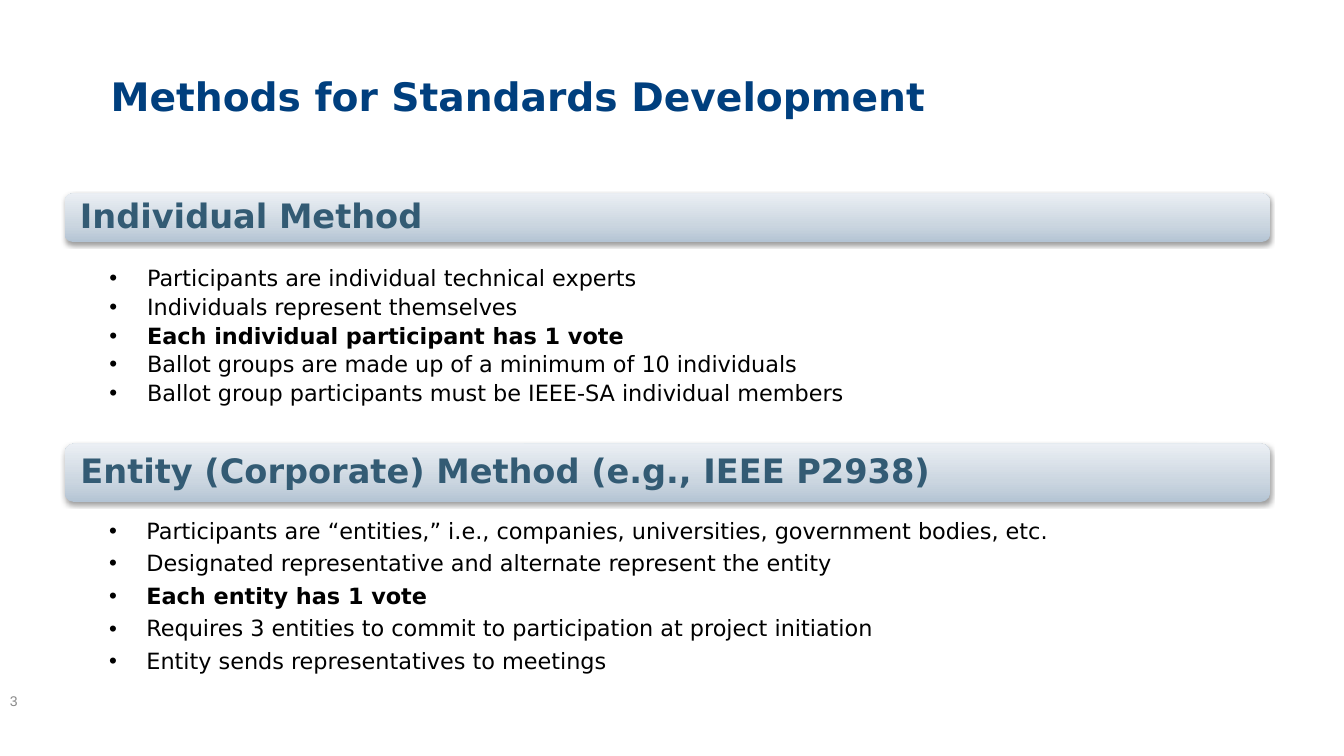
"""Builds the slide on individual and entity methods for standards development."""
from pptx import Presentation
from pptx.dml.color import RGBColor as RGB
from pptx.enum.shapes import MSO_SHAPE as SHAPE
from pptx.enum.text import MSO_ANCHOR as ANCHOR, PP_ALIGN as ALIGN
from pptx.oxml import parse_xml
from pptx.oxml.ns import nsdecls
from pptx.util import Pt

COLORS = {
    "title": "003F7E", "heading": "335B74", "body": "000000", "number": "898989",
    "bar_low": "B4C4D4", "bar_mid": "CBD6E0", "bar_high": "EBEFF4", "shadow": "000000",
}
FONT = "DejaVu Sans"
LEFT, WIDTH = 46.2, 861

INDIVIDUAL = [
    ("Participants are individual technical experts", False),
    ("Individuals represent themselves", False),
    ("Each individual participant has 1 vote", True),
    ("Ballot groups are made up of a minimum of 10 individuals", False),
    ("Ballot group participants must be IEEE-SA individual members", False),
]
ENTITY = [
    ("Participants are “entities,” i.e., companies, universities, government bodies, etc.", False),
    ("Designated representative and alternate represent the entity", False),
    ("Each entity has 1 vote", True),
    ("Requires 3 entities to commit to participation at project initiation", False),
    ("Entity sends representatives to meetings", False),
]


class Deck:
    def __init__(self):
        self.prs = Presentation()
        self.prs.slide_width, self.prs.slide_height = Pt(960), Pt(540)
        self.s = self.prs.slides.add_slide(self.prs.slide_layouts[6])

    def frame(self, sp, anchor, insets):
        tf = sp.text_frame
        tf.word_wrap = True
        tf.vertical_anchor = anchor
        tf.margin_left, tf.margin_top, tf.margin_right, tf.margin_bottom = map(Pt, insets)
        return tf

    def run(self, p, text, size, color, bold=False, font=FONT):
        p.alignment = ALIGN.LEFT
        r = p.add_run()
        r.text = text
        r.font.name, r.font.size, r.font.bold = font, Pt(size), bold
        r.font.color.rgb = RGB.from_string(COLORS[color])

    def text(self, x, y, w, h, text, size, color, anchor=ANCHOR.TOP, bold=False, font=FONT):
        sp = self.s.shapes.add_textbox(Pt(x), Pt(y), Pt(w), Pt(h))
        tf = self.frame(sp, anchor, (7.2, 3.6, 7.2, 3.6))
        self.run(tf.paragraphs[0], text, size, color, bold, font)

    def bar(self, y, h, text):
        sp = self.s.shapes.add_shape(SHAPE.ROUNDED_RECTANGLE, Pt(LEFT), Pt(y), Pt(WIDTH), Pt(h))
        sp.shadow.inherit = False
        sp.line.fill.background()
        stops = "".join(
            f'<a:gs pos="{pos * 1000}"><a:srgbClr val="{COLORS[c]}"/></a:gs>'
            for pos, c in ((0, "bar_low"), (35, "bar_mid"), (100, "bar_high")))
        ln = sp.line._get_or_add_ln()
        ln.addprevious(parse_xml(
            f'<a:gradFill {nsdecls("a")} rotWithShape="1"><a:gsLst>{stops}</a:gsLst>'
            '<a:lin ang="16200000" scaled="0"/></a:gradFill>'))
        ln.getnext().append(parse_xml(
            f'<a:outerShdw {nsdecls("a")} blurRad="{Pt(3.1)}" dist="{Pt(1.6)}" dir="5400000" '
            f'rotWithShape="0"><a:srgbClr val="{COLORS["shadow"]}"><a:alpha val="38000"/>'
            '</a:srgbClr></a:outerShdw>'))
        p = self.frame(sp, ANCHOR.MIDDLE, (9.2, 7.2, 9.2, 7.2)).paragraphs[0]
        p.line_spacing = 0.9
        self.run(p, text, 24, "heading", True)

    def bullets(self, y, h, items, gap, margin, hang):
        sp = self.s.shapes.add_textbox(Pt(LEFT), Pt(y), Pt(WIDTH), Pt(h))
        tf = self.frame(sp, ANCHOR.TOP, (27.4, 1.4, 8.6, 1.4))
        for i, (text, bold) in enumerate(items):
            p = tf.add_paragraph() if i else tf.paragraphs[0]
            p.line_spacing, p.space_after = 0.9, Pt(gap)
            pPr = p._p.get_or_add_pPr()
            pPr.set("marL", str(Pt(margin)))
            pPr.set("indent", str(Pt(-hang)))
            pPr.append(parse_xml(f'<a:buFont {nsdecls("a")} typeface="Arial"/>'))
            pPr.append(parse_xml(f'<a:buChar {nsdecls("a")} char="•"/>'))
            self.run(p, text, 16, "body", bold)


def main():
    deck = Deck()
    deck.text(72, 48, 816, 90, "Methods for Standards Development", 28, "title", bold=True)
    deck.bar(138.2, 34.6, "Individual Method")
    deck.bullets(189.7, 134, INDIVIDUAL, 3.2, 31.5, 27)
    deck.bar(316.8, 41.8, "Entity (Corporate) Method (e.g., IEEE P2938)")
    deck.bullets(370, 116, ENTITY, 6, 31, 26.6)
    deck.text(0, 486, 72, 28.8, "3", 10, "number", ANCHOR.MIDDLE, font="Arial")
    deck.prs.save("out.pptx")


if __name__ == "__main__":
    main()
